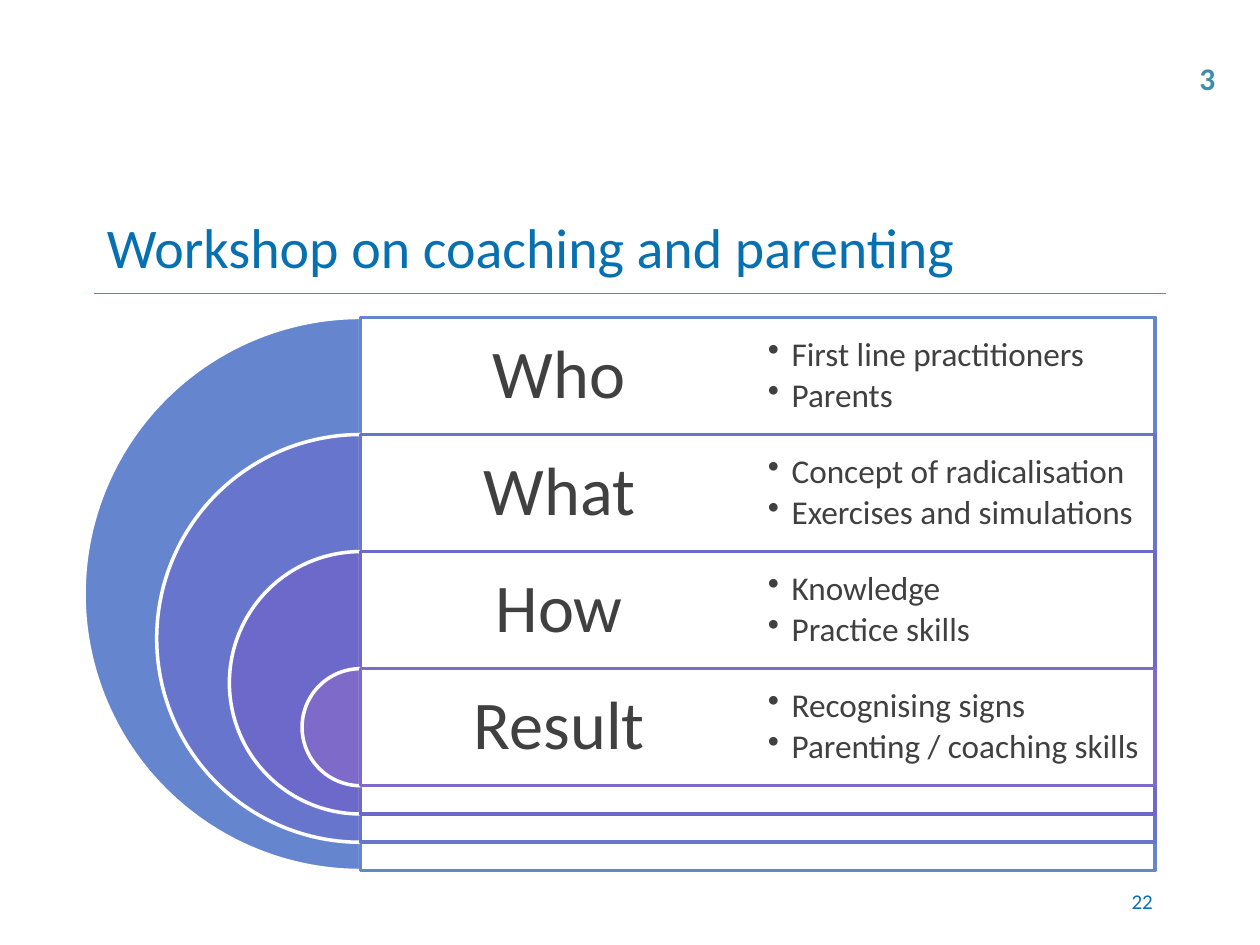
from lxml import etree
from pptx import Presentation
from pptx import util as u
from pptx.dml.color import RGBColor
from pptx.enum import shapes, text
from pptx.oxml.ns import qn

WHITE = RGBColor(0xFF, 0xFF, 0xFF)
DARK = RGBColor(0x40, 0x40, 0x40)
BLUE = RGBColor(0x07, 0x70, 0xB1)
TEAL = RGBColor(0x3E, 0x8E, 0xA9)
RULE = RGBColor(0x0B, 0xA7, 0xDF)

ROWS = [
    ("Who", ["First line practitioners", "Parents"], RGBColor(0x65, 0x85, 0xCF)),
    ("What", ["Concept of radicalisation", "Exercises and simulations"], RGBColor(0x67, 0x75, 0xCD)),
    ("How", ["Knowledge", "Practice skills"], RGBColor(0x6C, 0x69, 0xCB)),
    ("Result", ["Recognising signs", "Parenting / coaching skills"], RGBColor(0x7E, 0x6B, 0xC9)),
]
TOP, CENTRE, ROW, GROWTH, COLUMN = 6.4, 7.27, 2.36, 2.93, 8.01


def write(box, *lines, size, color, align=text.PP_ALIGN.LEFT, bold=False,
          inset=None, bullet=False, spacing=1.0, wrap=True,
          anchor=text.MSO_ANCHOR.MIDDLE):
    """Fill a box with one formatted paragraph per line; inset is in cm."""
    frame = box.text_frame
    frame.word_wrap = wrap
    frame.vertical_anchor = anchor
    if inset is not None:
        frame.margin_left = frame.margin_right = u.Cm(inset)
        frame.margin_top = frame.margin_bottom = u.Cm(inset)
    frame.text = "\n".join(lines)
    for para in frame.paragraphs:
        para.alignment = align
        para.line_spacing = spacing
        if bullet:
            para.space_after = u.Pt(2.8)
            properties = para._p.get_or_add_pPr()
            properties.set("marL", str(u.Cm(0.48)))
            properties.set("indent", str(u.Cm(-0.48)))
            etree.SubElement(properties, qn("a:buChar"), char="•")
        para.font.name = "Calibri"
        para.font.size = u.Pt(size)
        para.font.bold = bold
        para.font.color.rgb = color


def add_panel(kind, left, top, width, height, fill, line):
    panel = page.shapes.add_shape(kind, u.Cm(left), u.Cm(top), u.Cm(width), u.Cm(height))
    panel.shadow.inherit = False
    panel.fill.solid()
    panel.fill.fore_color.rgb = fill
    panel.line.color.rgb = line
    panel.line.width = u.Pt(2)
    return panel


deck = Presentation()
deck.slide_width, deck.slide_height = u.Cm(25.4), u.Cm(19.05)
page = deck.slides.add_slide(deck.slide_layouts[5])

title = page.shapes.title
title.left, title.top, title.width, title.height = u.Cm(1.9), u.Cm(4.01), u.Cm(21.59), u.Cm(1.9)
write(title, "Workshop on coaching and parenting", size=32, color=BLUE)

rule = page.shapes.add_connector(shapes.MSO_CONNECTOR.STRAIGHT,
                                 u.Cm(1.9), u.Cm(5.92), u.Cm(23.5), u.Cm(5.92))
rule.line.color.rgb = RULE
rule.line.width = u.Pt(0.75)
etree.SubElement(rule._element.spPr, qn("a:effectLst"))

# Nested half discs, each with a panel of the same height to its right
for index, (heading, points, color) in enumerate(ROWS):
    top = TOP + index * ROW
    size = ROW + (len(ROWS) - 1 - index) * GROWTH

    disc = add_panel(shapes.MSO_SHAPE.PIE, CENTRE - size / 2, top, size, size, color, WHITE)
    disc.adjustments[0], disc.adjustments[1] = 54, 162  # from 90 to 270 degrees

    panel = add_panel(shapes.MSO_SHAPE.RECTANGLE, CENTRE, top, 2 * COLUMN, size, WHITE, color)
    white = panel.fill._xPr.find(qn("a:solidFill"))[0]
    etree.SubElement(white, qn("a:alpha"), val="90000")

    label = page.shapes.add_textbox(u.Cm(CENTRE), u.Cm(top), u.Cm(COLUMN), u.Cm(ROW))
    write(label, heading, size=39, color=DARK, align=text.PP_ALIGN.CENTER,
          inset=0.41, spacing=0.9)

    details = page.shapes.add_textbox(u.Cm(CENTRE + COLUMN), u.Cm(top), u.Cm(COLUMN), u.Cm(ROW))
    write(details, *points, size=19, color=DARK, inset=0.2, bullet=True, spacing=0.9)

number = page.shapes.add_textbox(u.Cm(18.21), u.Cm(17.65), u.Cm(5.28), u.Cm(1.02))
write(number, "22", size=12, color=BLUE, align=text.PP_ALIGN.RIGHT)

section = page.shapes.add_textbox(u.Cm(23.93), u.Cm(1.07), u.Cm(0.84), u.Cm(1.02))
write(section, "3", size=18, color=TEAL, bold=True, wrap=False, anchor=text.MSO_ANCHOR.TOP)

deck.save("out.pptx")
